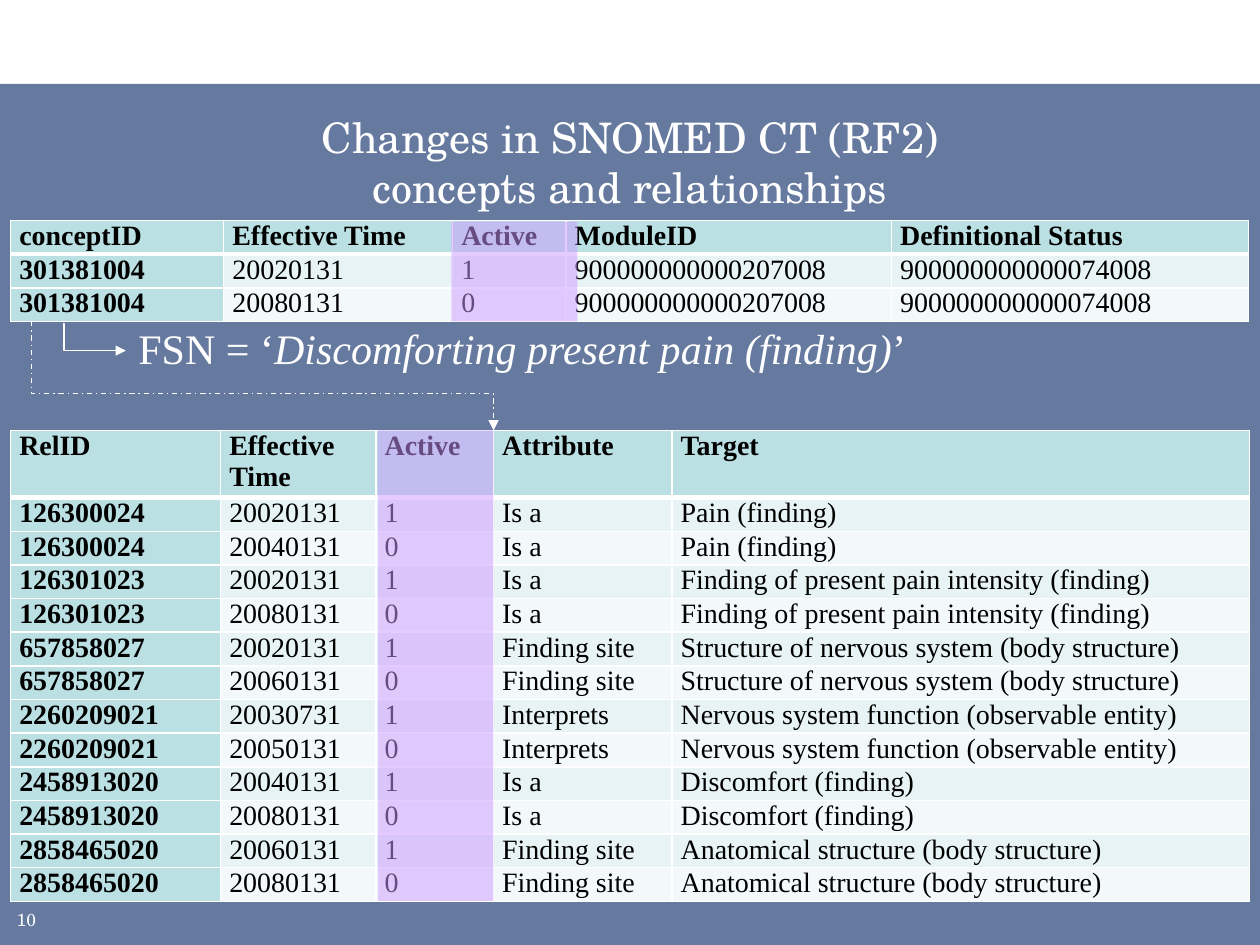
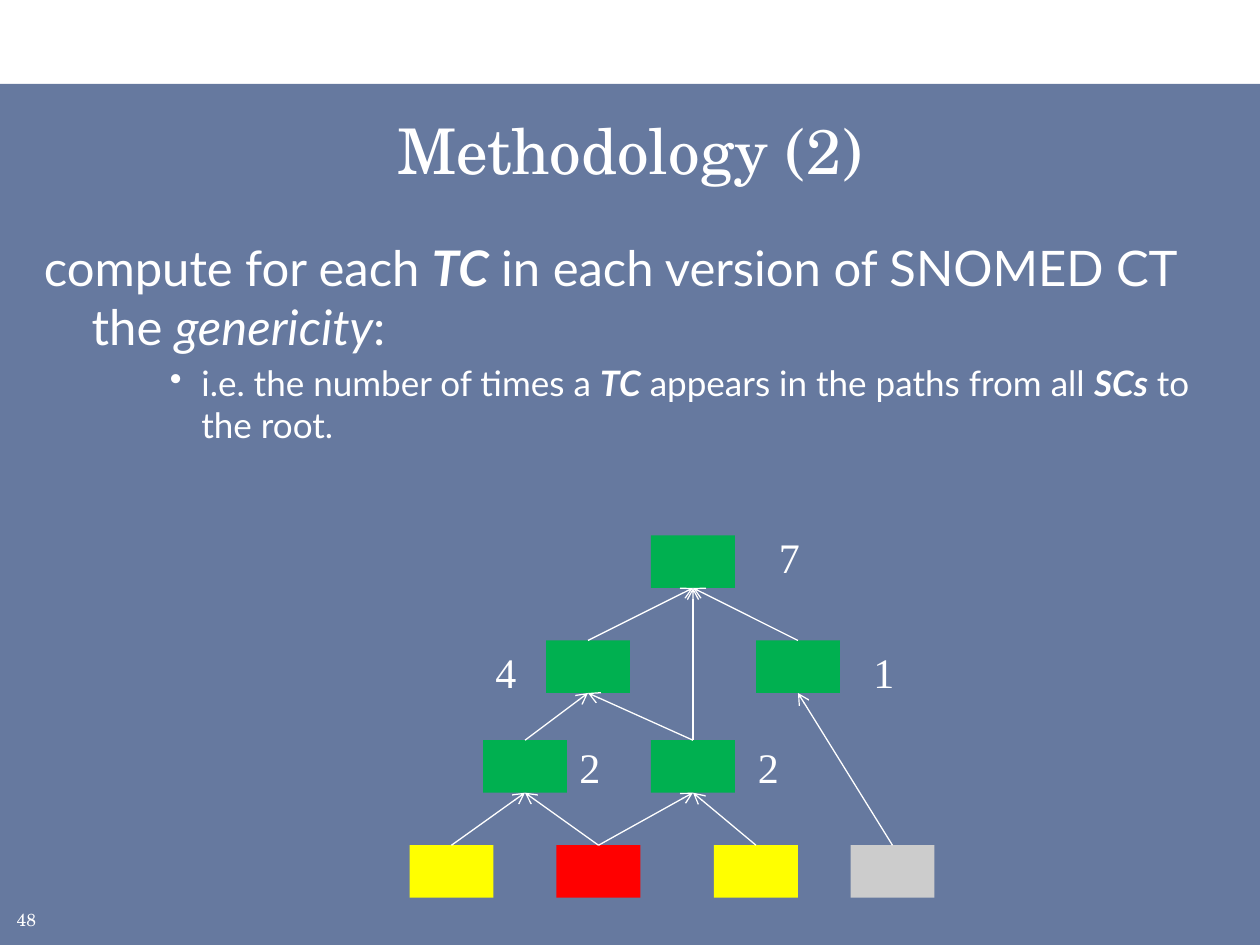
from lxml.etree import SubElement
from pptx import Presentation
from pptx.dml.color import RGBColor
from pptx.enum.dml import MSO_LINE
from pptx.enum.shapes import MSO_CONNECTOR as LINK, MSO_SHAPE as FORM
from pptx.enum.text import MSO_AUTO_SIZE as FIT, PP_ALIGN as ALIGN
from pptx.oxml.ns import qn
from pptx.util import Inches, Pt

WHITE, BLACK, NAVY, TEAL, LILAC = "FFFFFF", "000000", "002060", "BBE0E3", "CC99FF"
STRIPES = ["F3F9FA", "E7F3F4"]
GREEN, YELLOW, RED, GREY = "00B050", "FFFF00", "FF0000", "CCCCCC"
HEADING, SERIF, SANS = "TeX Gyre Schola", "Times New Roman", "Lato"


def paint(fill, color, opacity=100):
    fill.solid()
    fill.fore_color.rgb = RGBColor.from_string(color)
    if opacity < 100:
        tint = fill._xPr.find(qn("a:solidFill"))[0]
        SubElement(tint, qn("a:alpha"), val=str(opacity * 1000))


def write(paragraph, text, font=SERIF, size=24, color=WHITE, bold=False, italic=False):
    run = paragraph.add_run()
    run.text = text
    run.font.name, run.font.size = font, Pt(size)
    run.font.bold, run.font.italic = bold, italic
    paint(run.font.fill, color)


deck = Presentation()
deck.slide_width, deck.slide_height = Inches(10), Inches(7.5)
step = deck.slide_width // 1200

for title, title_size, number in [
    ("Changes in SNOMED CT (RF2)\nconcepts and relationships", 24, "10"),
    ("Methodology (2)", 36, "48"),
]:
    slide = deck.slides.add_slide(deck.slide_layouts[6])
    band = slide.shapes.add_shape(FORM.RECTANGLE, 0, step * 80, step * 1200, step * 820)
    paint(band.fill, NAVY, 60)
    band.line.fill.background()
    footer = slide.shapes.add_textbox(*[step * v for v in (4, 860, 47, 30)])
    write(footer.text_frame.paragraphs[0], number, font=HEADING, size=10)
    heading = slide.shapes.add_textbox(*[step * v for v in (30, 100, 1140, 100)])
    heading.text_frame.word_wrap = True
    heading_line = heading.text_frame.paragraphs[0]
    heading_line.alignment = ALIGN.CENTER
    for position, words in enumerate(title.split("\n")):
        if position:
            heading_line.add_line_break()
        write(heading_line, words, font=HEADING, size=title_size)

changes, methodology = deck.slides

concept_tab = changes.shapes.add_shape(FORM.RECTANGLE, *[step * v for v in (10, 250, 40, 56)])
paint(concept_tab.fill, TEAL)
paint(concept_tab.line.fill, BLACK)
concept_tab.line.width = Pt(0.75)

concepts = [
    ("conceptID", "Effective Time", "Active", "ModuleID", "Definitional Status"),
    ("301381004", "20020131", "1", "900000000000207008", "900000000000074008"),
    ("301381004", "20080131", "0", "900000000000207008", "900000000000074008"),
]
relationships = [("RelID", "Effective Time", "Active", "Attribute", "Target")]
for rel_id, start, end, attribute, target in [
    ("126300024", "20020131", "20040131", "Is a", "Pain (finding)"),
    ("126301023", "20020131", "20080131", "Is a", "Finding of present pain intensity (finding)"),
    ("657858027", "20020131", "20060131", "Finding site", "Structure of nervous system (body structure)"),
    ("2260209021", "20030731", "20050131", "Interprets", "Nervous system function (observable entity)"),
    ("2458913020", "20040131", "20080131", "Is a", "Discomfort (finding)"),
    ("2858465020", "20060131", "20080131", "Finding site", "Anatomical structure (body structure)"),
]:
    relationships.append((rel_id, start, "1", attribute, target))
    relationships.append((rel_id, end, "0", attribute, target))

for top, widths, records in [
    (210, (203, 218, 108, 310, 340), concepts),
    (410, (200, 148, 112, 170, 550), relationships),
]:
    grid = changes.shapes.add_table(
        len(records), len(widths), step * 10, step * top,
        step * sum(widths), Inches(0.24) * len(records)).table
    for column, width in zip(grid.columns, widths):
        column.width = step * width
    for r, record in enumerate(records):
        for c, entry in enumerate(record):
            cell = grid.cell(r, c)
            cell.margin_left = cell.margin_right = Inches(0.07)
            cell.margin_top = cell.margin_bottom = 0
            for side in ("lnL", "lnR", "lnT", "lnB"):
                thick = (r, side) in [(0, "lnB"), (1, "lnT")]
                edge = SubElement(cell._tc.get_or_add_tcPr(), qn("a:" + side), w=str(Pt(3 if thick else 1)))
                SubElement(SubElement(edge, qn("a:solidFill")), qn("a:srgbClr"), val=WHITE)
            key = r == 0 or c == 0
            paint(cell.fill, TEAL if key else STRIPES[r % 2])
            cell_line = cell.text_frame.paragraphs[0]
            cell_line.alignment = ALIGN.JUSTIFY
            write(cell_line, entry, size=16, color=BLACK, bold=key)

fsn = changes.shapes.add_textbox(*[step * v for v in (120, 301, 800, 60)])
fsn.text_frame.word_wrap = True
fsn.text_frame.auto_size = FIT.SHAPE_TO_FIT_TEXT
for words, slanted in [("FSN = ‘", False), ("Discomforting present pain (finding)", True), ("’", False)]:
    write(fsn.text_frame.paragraphs[0], words, italic=slanted)

for place in [(430, 211, 120, 95), (360, 410, 110, 448)]:
    active_column = changes.shapes.add_shape(FORM.RECTANGLE, *[step * v for v in place])
    paint(active_column.fill, LILAC, 50)
    active_column.line.fill.background()

for ends, bend, turned in [((60, 308, 120, 334), 1500, False), ((198, 138, 302, 578), 66300, True)]:
    pointer = changes.shapes.add_connector(LINK.ELBOW, *[step * v for v in ends])
    shape_xml = pointer._element.spPr
    guides = shape_xml.find(qn("a:prstGeom")).get_or_add_avLst()
    SubElement(guides, qn("a:gd"), name="adj1", fmla=f"val {bend}")
    if turned:
        shape_xml.xfrm.set("rot", str(270 * 60000))
        shape_xml.xfrm.set("flipH", "1")
        pointer.line.dash_style = MSO_LINE.DASH_DOT

body = methodology.shapes.add_textbox(*[step * v for v in (30, 220, 1140, 650)]).text_frame
body.word_wrap = True
task, detail = body.paragraphs[0], body.add_paragraph()
for paragraph, left, hanging in [(task, 0.38, 0.38), (detail, 1.25, 0.25)]:
    indents = paragraph._p.get_or_add_pPr()
    indents.set("marL", str(Inches(left)))
    indents.set("indent", str(-Inches(hanging)))
SubElement(SubElement(indents, qn("a:buClr")), qn("a:srgbClr"), val=WHITE)
SubElement(indents, qn("a:buChar"), char="•")
detail.space_before = Pt(4)
for paragraph, size, words, bold, italic in [
    (task, 28, "compute for each ", False, False),
    (task, 28, "TC", True, True),
    (task, 28, " in each version of SNOMED CT the ", False, False),
    (task, 28, "genericity", False, True),
    (task, 28, ":", False, False),
    (detail, 20, "i.e. the number of times a ", False, False),
    (detail, 20, "TC", True, True),
    (detail, 20, " appears in the paths from all ", False, False),
    (detail, 20, "SCs", True, True),
    (detail, 20, " to the root.", False, False),
]:
    write(paragraph, words, font=SANS, size=size, bold=bold, italic=italic)

nodes = {}
for name, left, top, color in [
    ("root", 620, 510, GREEN),
    ("upper left", 520, 610, GREEN),
    ("upper right", 720, 610, GREEN),
    ("lower left", 460, 705, GREEN),
    ("lower right", 620, 705, GREEN),
    ("first leaf", 390, 805, YELLOW),
    ("shared leaf", 530, 805, RED),
    ("third leaf", 680, 805, YELLOW),
    ("last leaf", 810, 805, GREY),
]:
    node = methodology.shapes.add_shape(FORM.RECTANGLE, *[step * v for v in (left, top, 80, 50)])
    paint(node.fill, color)
    node.line.fill.background()
    nodes[name] = node

for child, parent in [
    ("first leaf", "lower left"),
    ("shared leaf", "lower left"),
    ("shared leaf", "lower right"),
    ("third leaf", "lower right"),
    ("last leaf", "upper right"),
    ("lower left", "upper left"),
    ("lower right", "upper left"),
    ("lower right", "root"),
    ("upper left", "root"),
    ("upper right", "root"),
]:
    is_a = methodology.shapes.add_connector(LINK.STRAIGHT, 0, 0, 0, 0)
    is_a.begin_connect(nodes[child], 0)
    is_a.end_connect(nodes[parent], 2)

for genericity, left, top in [("7", 730, 500), ("1", 820, 610), ("4", 460, 610), ("2", 710, 700), ("2", 540, 700)]:
    count = methodology.shapes.add_textbox(*[step * v for v in (left, top, 44, 60)])
    count.text_frame.word_wrap = False
    count.text_frame.auto_size = FIT.SHAPE_TO_FIT_TEXT
    write(count.text_frame.paragraphs[0], genericity)

for slide, arrowhead in [(changes, "triangle"), (methodology, "arrow")]:
    for part in slide.shapes:
        if part._element.tag == qn("p:cxnSp"):
            paint(part.line.fill, WHITE)
            part.line.width = Pt(0.75)
            SubElement(part._element.spPr.find(qn("a:ln")), qn("a:tailEnd"), type=arrowhead)
            SubElement(part._element.spPr, qn("a:effectLst"))
        elif not part.has_table:
            part.shadow.inherit = False

deck.save("out.pptx")
